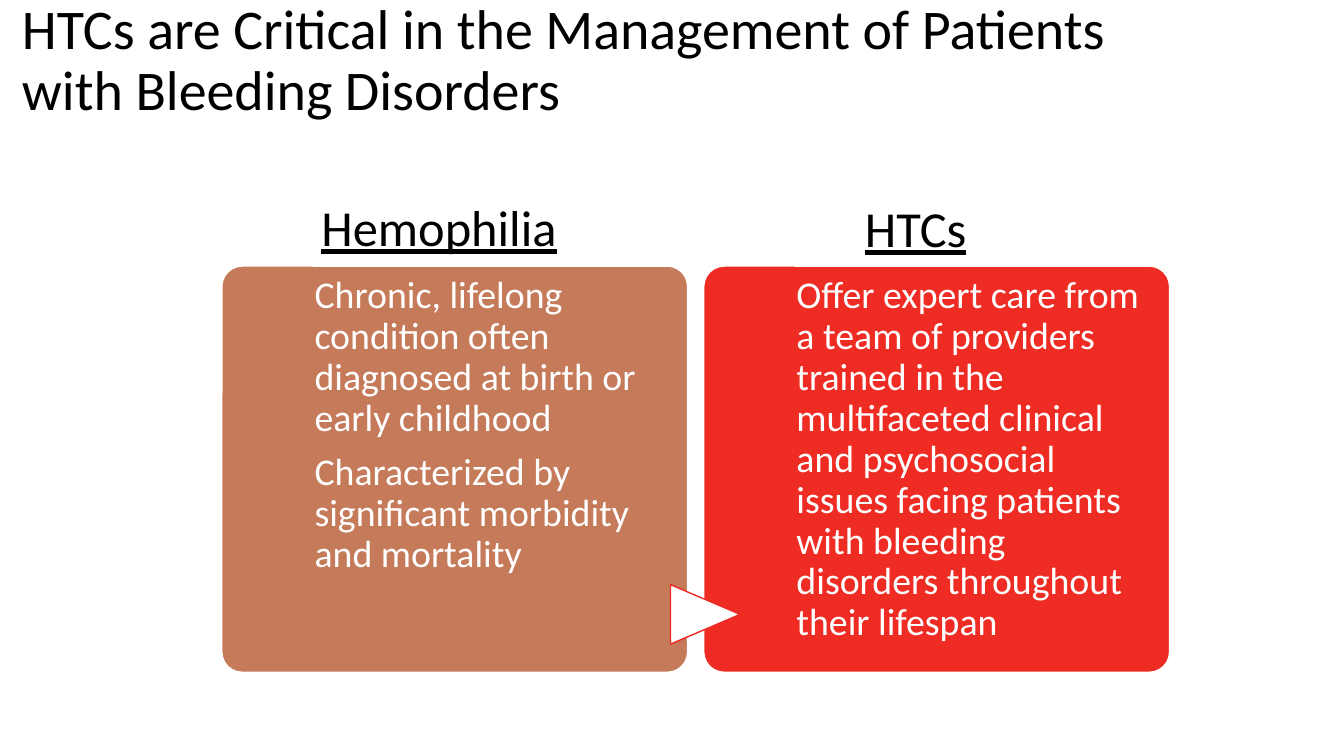
from pptx import Presentation
from pptx.dml.color import RGBColor
from pptx.enum.shapes import MSO_SHAPE
from pptx.enum.text import MSO_ANCHOR, PP_ALIGN
from pptx.util import Inches, Pt

ROUNDED = MSO_SHAPE.ROUNDED_RECTANGLE
TRIANGLE = MSO_SHAPE.FLOWCHART_EXTRACT
TOP, MIDDLE = MSO_ANCHOR.TOP, MSO_ANCHOR.MIDDLE
LEFT = PP_ALIGN.LEFT

FONT = "Calibri"
BLACK, WHITE, CLAY, RED = "000000", "FFFFFF", "C57A5A", "EE2C24"

CARD_LEFT, CARD_TOP, CARD_WIDTH, CARD_HEIGHT = 2.2, 2.64, 4.62, 4.03
CARD_PITCH = 4.78
TEXT_INDENT, TEXT_WIDTH = 0.92, 3.44

CARDS = [
    (CLAY, [
        "Chronic, lifelong condition often diagnosed at birth or early childhood",
        "Characterized by significant morbidity and mortality",
    ]),
    (RED, [
        "Offer expert care from a team of providers trained in the multifaceted "
        "clinical and psychosocial issues facing patients with bleeding "
        "disorders throughout their lifespan",
    ]),
]
HEADINGS = [
    ("Hemophilia", (3.09, 1.9, 2.55, 0.71)),
    ("HTCs", (8.48, 1.91, 1.22, 0.71)),
]


def color(hex_text):
    """Return the colour for a hex string."""
    return RGBColor.from_string(hex_text)


def add_text(page, box, lines, size, ink, anchor=TOP, insets=(0.1, 0.05, 0.1, 0.05),
             spacing=None, gap=0, underline=None, wrap=True):
    """Place a text box holding one paragraph per line."""
    frame = page.shapes.add_textbox(*map(Inches, box)).text_frame
    frame.word_wrap = wrap
    frame.vertical_anchor = anchor
    (frame.margin_left, frame.margin_top,
     frame.margin_right, frame.margin_bottom) = map(Inches, insets)
    frame.text = "\n".join(lines)
    for para in frame.paragraphs:
        para.alignment = LEFT
        para.line_spacing = spacing
        para.space_after = Pt(gap)
        para.font.name = FONT
        para.font.size = Pt(size)
        para.font.underline = underline
        para.font.color.rgb = color(ink)


def add_block(page, kind, box, fill, line):
    """Place a filled and outlined preset shape."""
    shape = page.shapes.add_shape(kind, *map(Inches, box))
    shape.shadow.inherit = False
    shape.fill.solid()
    shape.fill.fore_color.rgb = color(fill)
    shape.line.color.rgb = color(line)
    shape.line.width = Pt(1)
    return shape


def add_title(page, box):
    """Place the slide title."""
    add_text(page, box,
             ["HTCs are Critical in the Management of Patients with Bleeding Disorders"],
             40, BLACK, anchor=MIDDLE, spacing=0.9)


def add_card(page, box, fill):
    """Place the rounded background of a card."""
    card = add_block(page, ROUNDED, box, fill, WHITE)
    card.adjustments[0] = 0.05


def add_card_text(page, box, lines):
    """Place the indented text of a card."""
    left, top, _, height = box
    add_text(page, (left + TEXT_INDENT, top, TEXT_WIDTH, height), lines, 27, WHITE,
             insets=(0, 0.1, 0, 0), spacing=0.9, gap=9.45)


def add_arrow(page, box):
    """Place the triangle that points from the first card to the second."""
    add_block(page, TRIANGLE, box, WHITE, RED).rotation = 90


def add_comparison(page, left, top, width, height):
    """Place both cards with the arrow between them."""
    for index, (fill, lines) in enumerate(CARDS):
        box = (left + index * CARD_PITCH, top, width, height)
        add_card(page, box, fill)
        if index:
            add_arrow(page, (box[0] - 0.28, top + 3.11, 0.59, 0.69))
        add_card_text(page, box, lines)


def main():
    """Build and save the slide."""
    deck = Presentation()
    deck.slide_width, deck.slide_height = Inches(13.33), Inches(7.5)
    page = deck.slides.add_slide(deck.slide_layouts[6])
    add_title(page, (0.12, 0.11, 11.83, 1.01))
    add_comparison(page, CARD_LEFT, CARD_TOP, CARD_WIDTH, CARD_HEIGHT)
    for heading, box in HEADINGS:
        add_text(page, box, [heading], 36, BLACK, underline=True, wrap=False)
    deck.save("out.pptx")


if __name__ == "__main__":
    main()
